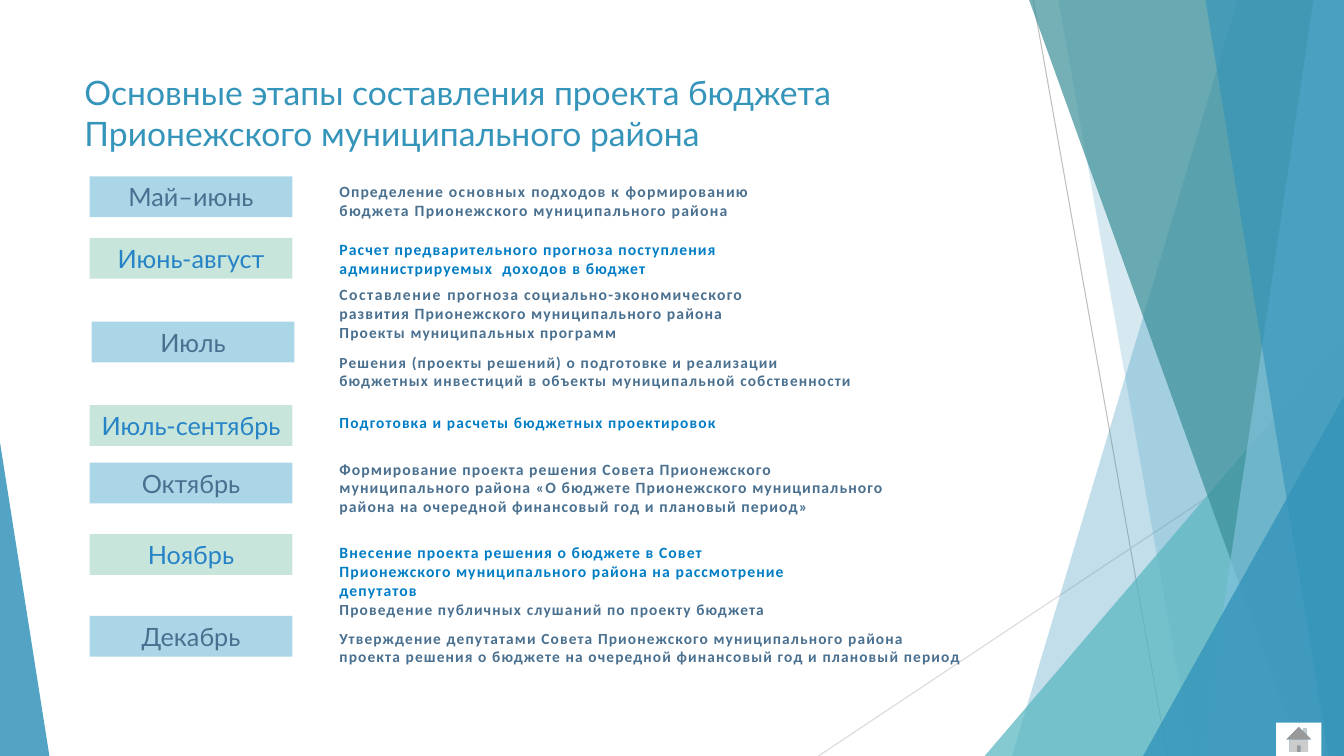
from dataclasses import dataclass

from lxml.etree import SubElement
from pptx import Presentation
from pptx.dml.color import RGBColor
from pptx.enum.shapes import MSO_CONNECTOR as Connector, MSO_SHAPE as Preset
from pptx.enum.text import MSO_ANCHOR as Anchor, PP_ALIGN as Align
from pptx.oxml.ns import qn
from pptx.shapes.autoshape import Shape
from pptx.slide import Slide
from pptx.util import Pt


@dataclass(frozen=True)
class Theme:
    accent: str = "3494BA"
    teal: str = "58B6C0"
    dark_teal: str = "3A8F98"
    sky: str = "7FC1DB"
    white: str = "FFFFFF"
    line_dark: str = "BFBFBF"
    line_light: str = "D9D9D9"
    month_fills: tuple[str, str] = ("AAD6E7", "C8E5DC")
    month_inks: tuple[str, str] = ("4A7090", "2683C6")
    step_inks: tuple[str, str] = ("4A7090", "007DC5")
    heading_font: str = "Lato"
    step_font: str = "Calibri"
    title_size: float = 24
    month_size: float = 18
    step_size: float = 11.2
    small_step_size: float = 11
    hairline: float = 0.75


THEME = Theme()
PAGE_WIDTH, PAGE_HEIGHT = 960, 540
MONTH_WIDTH, MONTH_HEIGHT = 144.7, 29.1
MONTH_LEFT, STEP_LEFT = 64.1, 235.4


@dataclass(frozen=True)
class Frame:
    left: float
    top: float
    width: float
    height: float

    def lengths(self) -> tuple[Pt, Pt, Pt, Pt]:
        return Pt(self.left), Pt(self.top), Pt(self.width), Pt(self.height)


@dataclass(frozen=True)
class Band:
    top_x: float
    bottom_x: float
    color: str
    opacity: int


@dataclass(frozen=True)
class Wedge:
    frame: Frame
    apex: float
    color: str
    opacity: int


@dataclass(frozen=True)
class Ray:
    start: tuple[float, float]
    end: tuple[float, float]
    color: str


@dataclass(frozen=True)
class Span:
    text: str
    spacing: float = 0.8


@dataclass(frozen=True)
class Step:
    top: float
    height: float
    spans: tuple[Span, ...]
    width: float = 356.4
    size: float = THEME.step_size


@dataclass(frozen=True)
class Stage:
    month: str
    top: float
    steps: tuple[Step, ...]
    left: float = MONTH_LEFT


RAYS = (
    Ray((738, 0), (833.8, PAGE_HEIGHT), THEME.line_dark),
    Ray((PAGE_WIDTH, 290.2), (584.6, PAGE_HEIGHT), THEME.line_light),
)
BACKDROP = (
    Band(884.2, 722.9, THEME.accent, 30),
    Band(756, 851.8, THEME.accent, 20),
    Wedge(Frame(703.4, 239.8, 256.6, 300.2), 1, THEME.teal, 72),
    Band(735.1, 929.5, THEME.dark_teal, 70),
    Band(938.2, 858.2, THEME.sky, 70),
    Band(861.1, 949, THEME.accent, 65),
    Wedge(Frame(816.5, 283, 143.5, 257), 1, THEME.accent, 80),
    Wedge(Frame(0, 316.1, 35.3, 223.9), 0, THEME.accent, 85),
)
TITLE = "Основные этапы составления проекта бюджета Прионежского муниципального района"
SMALL = THEME.small_step_size
STAGES = (
    Stage("Май–июнь", 126, (
        Step(126.7, 28.8, (
            Span("Определение "), Span("основных ", 1), Span("подходов "), Span("к ", 1.1),
            Span("формированию бюджета Прионежского муниципального района", 0.9))),
    )),
    Stage("Июнь-август", 169.9, (
        Step(167.8, 28.8, (Span(
            "Расчет предварительного прогноза поступления администрируемых  доходов в бюджет"),)),
    )),
    Stage("Июль", 229.7, (
        Step(200.2, 29.5, (
            Span("Составление ", 1.1), Span("прогноза социально-экономического ", 0.9),
            Span("развития Прионежского муниципального района"))),
        Step(227.5, 20.9, (Span("Проекты муниципальных программ"),), size=SMALL),
        Step(248.4, 32.4, (Span(
            "Решения (проекты решений) о подготовке и реализации бюджетных инвестиций "
            "в объекты муниципальной собственности"),), 393.1, SMALL),
    ), left=65.5),
    Stage("Июль-сентябрь", 289.4, (
        Step(291.6, 24.5, (Span("Подготовка и расчеты бюджетных проектировок"),), size=SMALL),
    )),
    Stage("Октябрь", 330.5, (
        Step(324.7, 50.4, (Span(
            "Формирование проекта решения Совета Прионежского муниципального района "
            "«О бюджете Прионежского муниципального района на очередной финансовый год "
            "и плановый период»"),), 406.8),
    )),
    Stage("Ноябрь", 381.6, (
        Step(384.5, 28.8, (Span(
            "Внесение проекта решения о бюджете в Совет Прионежского муниципального района "
            "на рассмотрение депутатов"),)),
    )),
    Stage("Декабрь", 439.9, (
        Step(424.8, 20.9, (Span("Проведение публичных слушаний по проекту бюджета"),), size=SMALL),
        Step(445.7, 33.8, (Span(
            "Утверждение депутатами Совета Прионежского муниципального района проекта решения "
            "о бюджете на очередной финансовый год и плановый период"),), 460.8, SMALL),
    )),
)


def paint(shape: Shape, color: str, opacity: int = 100) -> None:
    shape.shadow.inherit = False
    shape.line.fill.background()
    shape.fill.solid()
    shape.fill.fore_color.rgb = RGBColor.from_string(color)
    if opacity < 100:
        tint = shape.element.spPr.find(".//" + qn("a:srgbClr"))
        SubElement(tint, qn("a:alpha")).set("val", str(opacity * 1000))


def style(span, font: str, size: float, color: str, bold: bool = False) -> None:
    span.font.name = font
    span.font.size = Pt(size)
    span.font.bold = bold
    span.font.color.rgb = RGBColor.from_string(color)


def draw_ray(page: Slide, ray: Ray) -> None:
    points = [Pt(value) for value in (*ray.start, *ray.end)]
    line = page.shapes.add_connector(Connector.STRAIGHT, *points)
    line.line.color.rgb = RGBColor.from_string(ray.color)
    line.line.width = Pt(THEME.hairline)
    SubElement(line.element.spPr, qn("a:effectLst"))


def draw_backdrop(page: Slide, piece: Band | Wedge) -> None:
    if isinstance(piece, Band):
        outline = page.shapes.build_freeform(Pt(piece.top_x), 0)
        corners = ((PAGE_WIDTH, 0), (PAGE_WIDTH, PAGE_HEIGHT), (piece.bottom_x, PAGE_HEIGHT))
        outline.add_line_segments([(Pt(x), Pt(y)) for x, y in corners], close=True)
        shape = outline.convert_to_shape()
    else:
        shape = page.shapes.add_shape(Preset.ISOSCELES_TRIANGLE, *piece.frame.lengths())
        shape.adjustments[0] = piece.apex
    paint(shape, piece.color, piece.opacity)


def draw_title(page: Slide) -> None:
    box = page.shapes.add_textbox(*Frame(53.3, 48.2, 676.8, 67).lengths())
    box.text_frame.word_wrap = True
    box.text_frame.text = TITLE
    style(box.text_frame.paragraphs[0].runs[0], THEME.heading_font, THEME.title_size, THEME.accent)


def draw_step(page: Slide, step: Step, color: str) -> None:
    box = page.shapes.add_textbox(*Frame(STEP_LEFT, step.top, step.width, step.height).lengths())
    box.text_frame.word_wrap = True
    para = box.text_frame.paragraphs[0]
    for piece in step.spans:
        span = para.add_run()
        span.text = piece.text
        style(span, THEME.step_font, step.size, color, bold=True)
        span._r.get_or_add_rPr().set("spc", str(round(piece.spacing * 100)))


def draw_stage(page: Slide, stage: Stage, tone: int) -> None:
    frame = Frame(stage.left, stage.top, MONTH_WIDTH, MONTH_HEIGHT)
    month = page.shapes.add_shape(Preset.RECTANGLE, *frame.lengths())
    paint(month, THEME.month_fills[tone])
    month.text_frame.text = stage.month
    month.text_frame.word_wrap = True
    month.text_frame.vertical_anchor = Anchor.MIDDLE
    para = month.text_frame.paragraphs[0]
    para.alignment = Align.CENTER
    style(para.runs[0], THEME.heading_font, THEME.month_size, THEME.month_inks[tone])
    for step in stage.steps:
        draw_step(page, step, THEME.step_inks[tone])


def main() -> None:
    deck = Presentation()
    deck.slide_width, deck.slide_height = Pt(PAGE_WIDTH), Pt(PAGE_HEIGHT)
    page = deck.slides.add_slide(deck.slide_layouts[6])
    for ray in RAYS:
        draw_ray(page, ray)
    for piece in BACKDROP:
        draw_backdrop(page, piece)
    draw_title(page)
    home_frame = Frame(911.5, 516.2, 32.4, 23.8)
    home = page.shapes.add_shape(Preset.ACTION_BUTTON_HOME, *home_frame.lengths())
    paint(home, THEME.white)
    for index, stage in enumerate(STAGES):
        draw_stage(page, stage, index % 2)
    deck.save("out.pptx")


if __name__ == "__main__":
    main()
